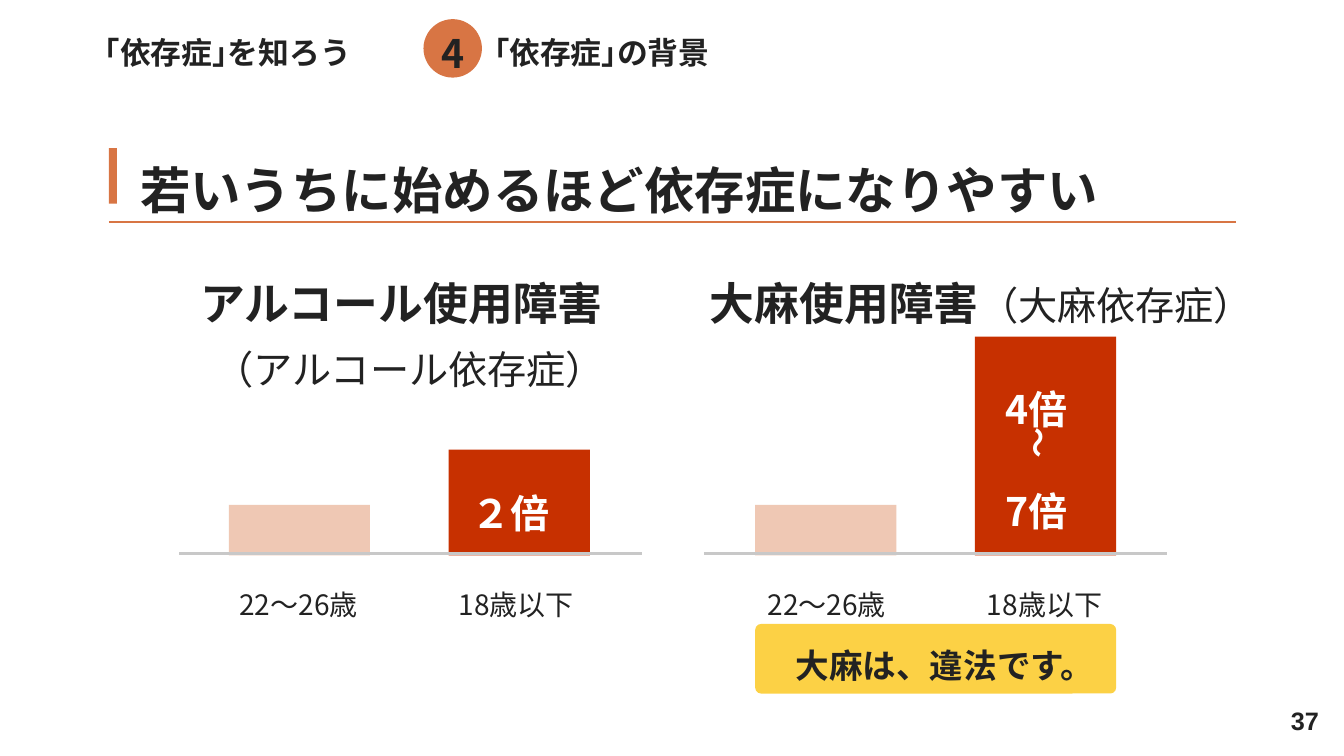
import pptx
import pptx.dml.color
import pptx.enum.shapes
import pptx.enum.text
import pptx.oxml
import pptx.oxml.ns
import pptx.util

Inches = pptx.util.Inches
Pt = pptx.util.Pt
RGBColor = pptx.dml.color.RGBColor
Shape = pptx.enum.shapes.MSO_SHAPE
Align = pptx.enum.text.PP_ALIGN
Anchor = pptx.enum.text.MSO_ANCHOR

INK = RGBColor(0x22, 0x22, 0x22)
WHITE = RGBColor(0xFF, 0xFF, 0xFF)
ORANGE = RGBColor(0xD8, 0x75, 0x44)
RED = RGBColor(0xC7, 0x30, 0x00)
PALE = RGBColor(0xEF, 0xC8, 0xB4)
GRAY = RGBColor(0xC8, 0xC8, 0xC8)
YELLOW = RGBColor(0xFC, 0xD1, 0x45)
JAPANESE = "Noto Sans CJK JP"
BAR_WIDTH = 1.4
BAR_BOTTOM = 5.51


def style_run(run, size, bold, color, font):
    run.font.size = Pt(size)
    run.font.bold = bold
    run.font.color.rgb = color
    run.font.name = font
    east_asian = pptx.oxml.parse_xml(
        f'<a:ea {pptx.oxml.ns.nsdecls("a")} typeface="{JAPANESE}"/>')
    run.font._element.find(pptx.oxml.ns.qn("a:latin")).addnext(east_asian)


def add_text(slide, box, text, size, bold=True, color=INK, font=JAPANESE,
             align=Align.LEFT, anchor=Anchor.TOP, leading=None, wrap=True):
    shape = slide.shapes.add_textbox(*map(Inches, box))
    frame = shape.text_frame
    frame.margin_left = frame.margin_right = 0
    frame.margin_top = frame.margin_bottom = 0
    frame.word_wrap = wrap
    frame.vertical_anchor = anchor
    frame.text = text
    paragraph = frame.paragraphs[0]
    paragraph.alignment = align
    if leading:
        paragraph.line_spacing = Pt(leading)
    style_run(paragraph.runs[0], size, bold, color, font)
    return shape


def add_block(slide, kind, box, color):
    shape = slide.shapes.add_shape(kind, *map(Inches, box))
    shape.shadow.inherit = False
    shape.fill.solid()
    shape.fill.fore_color.rgb = color
    shape.line.fill.background()
    return shape


def add_rule(slide, left, top, width, color, weight):
    """Draw a horizontal line."""
    line = slide.shapes.add_connector(
        pptx.enum.shapes.MSO_CONNECTOR.STRAIGHT,
        Inches(left), Inches(top), Inches(left + width), Inches(top))
    line.line.color.rgb = color
    line.line.width = Pt(weight)
    line._element.spPr.append(pptx.oxml.parse_xml(
        f'<a:effectLst {pptx.oxml.ns.nsdecls("a")}/>'))


def add_header(slide, left, top):
    add_text(slide, (left, top + 0.14, 2.87, 0.37), "｢依存症｣を知ろう", 22)
    badge_left = left + 3.16
    add_block(slide, Shape.OVAL, (badge_left, top, 0.58, 0.58), ORANGE)
    add_text(slide, (badge_left, top + 0.1, 0.58, 0.47), "4", 28, align=Align.CENTER)
    add_text(slide, (left + 3.86, top + 0.14, 7.44, 0.37), "｢依存症｣の背景", 22)


def add_title(slide, left, top, width):
    add_block(slide, Shape.RECTANGLE, (left, top, 0.08, 0.55), ORANGE)
    add_text(slide, (left + 0.31, top + 0.08, 10.16, 0.63),
             "若いうちに始めるほど依存症になりやすい", 36, leading=45)
    add_rule(slide, left, top + 0.73, width, ORANGE, 1.5)


def add_comparison(slide, axis_left, bars):
    """Draw bars given as (left, height, colour, label left, label) on one axis."""
    for left, height, color, label_left, label in bars:
        add_block(slide, Shape.RECTANGLE,
                  (left, BAR_BOTTOM - height, BAR_WIDTH, height), color)
        add_text(slide, (label_left, BAR_BOTTOM + 0.03, 1.72, 0.57), label, 20,
                 bold=False, align=Align.CENTER, leading=45)
    add_rule(slide, axis_left, BAR_BOTTOM - 0.02, 4.59, GRAY, 2.25)


def add_multiple(slide, left, top, text):
    add_text(slide, (left, top, 0.85, 0.59), text, 28, color=WHITE, leading=45)


def add_alcohol(slide, left, top):
    add_text(slide, (left + 0.21, top, 4.3, 0.63), "アルコール使用障害", 32, leading=45)
    add_text(slide, (left + 0.34, top + 0.79, 3.89, 0.47), "（アルコール依存症）", 28,
             bold=False, font="Arial", align=Align.CENTER, wrap=False)
    add_comparison(slide, left, [
        (left + 0.49, 0.5, PALE, left + 0.32, "22～26歳"),
        (left + 2.67, 1.05, RED, left + 2.48, "18歳以下")])
    add_multiple(slide, left + 2.9, top + 2.06, "２倍")


def add_cannabis(slide, left, top):
    heading = add_text(slide, (left + 0.06, top, 5.61, 0.63), "大麻使用障害", 32,
                       leading=45)
    run = heading.text_frame.paragraphs[0].add_run()
    run.text = "（大麻依存症）"
    style_run(run, 28, False, INK, JAPANESE)
    add_comparison(slide, left, [
        (left + 0.51, 0.5, PALE, left + 0.36, "22～26歳"),
        (left + 2.69, 2.17, RED, left + 2.52, "18歳以下")])
    add_multiple(slide, left + 2.99, top + 1.02, "4倍")
    add_multiple(slide, left + 2.99, top + 2.04, "7倍")
    tilde = add_text(slide, (left + 3.17, top + 1.57, 0.31, 0.37), "～", 22,
                     color=WHITE, wrap=False)
    tilde.rotation = 90


def add_warning(slide, left, top):
    panel = add_block(slide, Shape.ROUNDED_RECTANGLE, (left, top, 3.58, 0.69), YELLOW)
    panel.adjustments[0] = 0.084
    add_text(slide, (left + 0.4, top + 0.08, 3.03, 0.5), "大麻は、違法です。", 24,
             leading=38)


def main():
    presentation = pptx.Presentation()
    presentation.slide_width = Inches(13.33)
    presentation.slide_height = Inches(7.5)
    slide = presentation.slides.add_slide(presentation.slide_layouts[6])
    add_header(slide, 1.04, 0.19)
    add_title(slide, 1.08, 1.47, 11.18)
    add_alcohol(slide, 1.78, 2.64)
    add_cannabis(slide, 6.98, 2.64)
    add_warning(slide, 7.49, 6.19)
    add_text(slide, (12.65, 6.95, 0.43, 0.4), "37", 18, font="Arial",
             align=Align.RIGHT, anchor=Anchor.MIDDLE)
    presentation.save("out.pptx")


if __name__ == "__main__":
    main()
